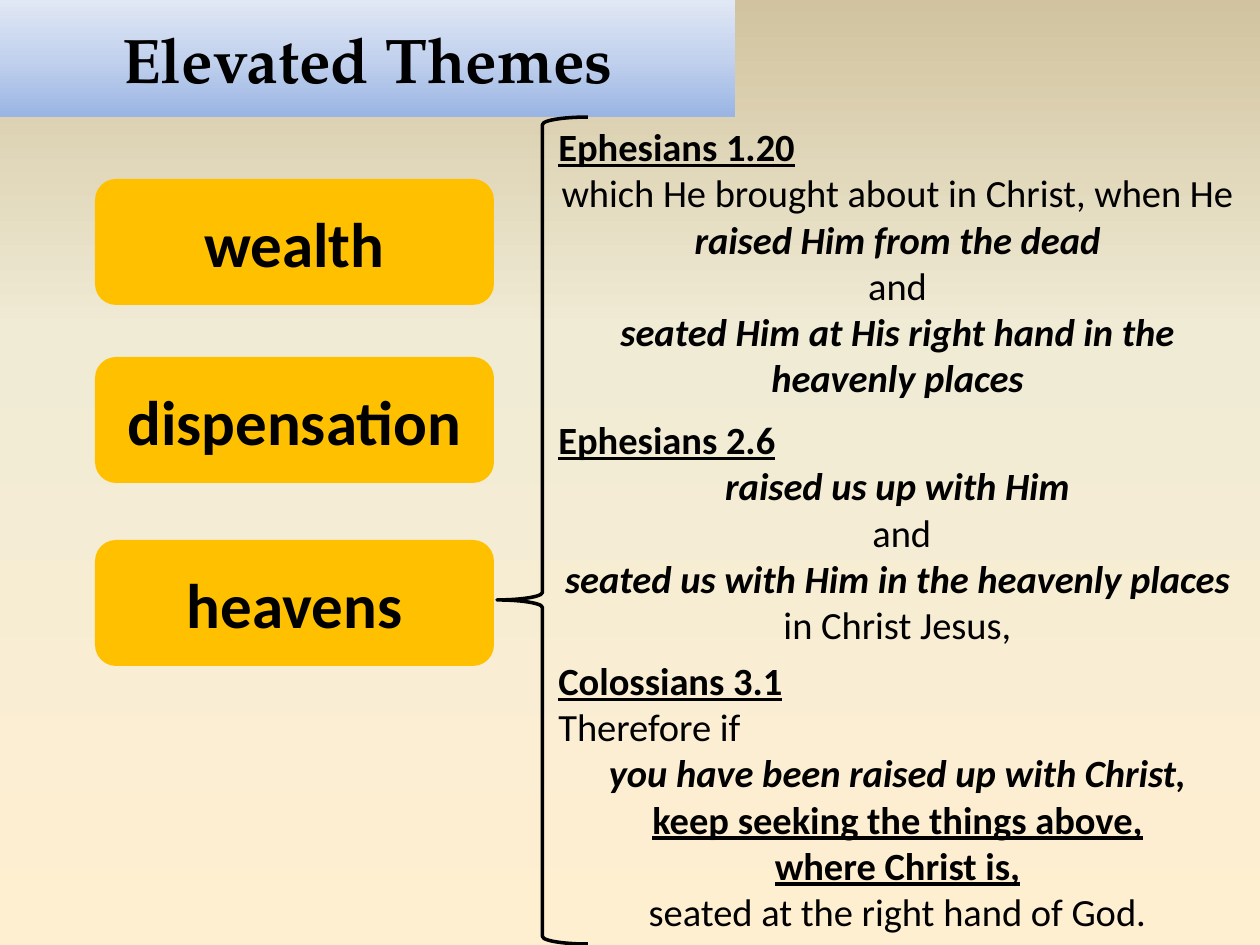
import copy
import pptx
import pptx.util
import pptx.dml.color
import pptx.enum.shapes
import pptx.enum.text

PX = 914400 / 126  # EMU per px
COLORS = {"text": "000000", "box": "FFC000"}
BACKGROUND_STOPS = [(0, "FFEFD1"), (0.65, "F0EBD5"), (1, "D1C39F")]
TITLE_STOPS = [(0, "9AB5E4"), (0.5, "C2D1ED"), (1, "E1E8F5")]
SHAPES = pptx.enum.shapes.MSO_SHAPE
ALIGN = pptx.enum.text.PP_ALIGN
ANCHOR = pptx.enum.text.MSO_ANCHOR
rgb = pptx.dml.color.RGBColor.from_string


def fill_gradient(fill, stops):
    fill.gradient()
    fill.gradient_angle = 90
    stop_list = fill._fill._gradFill.gsLst
    stop_list.append(copy.deepcopy(stop_list[0]))
    for stop, (position, color) in zip(fill.gradient_stops, stops):
        stop.position = position
        stop.color.rgb = rgb(color)


def add_run(paragraph, text, size, font_name="Calibri", **formats):
    run = paragraph.add_run()
    run.text = text
    run.font.color.rgb = rgb(COLORS["text"])
    values = {"name": font_name, "size": pptx.util.Pt(size), **formats}
    for name, value in values.items():
        setattr(run.font, name, value)


presentation = pptx.Presentation()
presentation.slide_width = pptx.util.Inches(10)
presentation.slide_height = pptx.util.Inches(7.5)
slide = presentation.slides.add_slide(presentation.slide_layouts[5])
fill_gradient(slide.background.fill, BACKGROUND_STOPS)

# Title band
title = slide.shapes.title
title.left, title.top, title.width, title.height = (round(v * PX) for v in (0, 0, 735, 117))
fill_gradient(title.fill, TITLE_STOPS)
title.text_frame.vertical_anchor = ANCHOR.MIDDLE
paragraph = title.text_frame.paragraphs[0]
paragraph.alignment = ALIGN.CENTER
add_run(paragraph, "Elevated Themes", 36, "TeX Gyre Pagella", bold=True)

# Theme boxes
for theme, top in [("wealth", 179), ("dispensation", 357), ("heavens", 540)]:
    box = slide.shapes.add_shape(
        SHAPES.ROUNDED_RECTANGLE, *(round(v * PX) for v in (95, top, 399, 126)))
    box.shadow.inherit = False
    box.fill.solid()
    box.fill.fore_color.rgb = rgb(COLORS["box"])
    box.line.fill.background()
    box.text_frame.vertical_anchor = ANCHOR.MIDDLE
    paragraph = box.text_frame.paragraphs[0]
    paragraph.alignment = ALIGN.CENTER
    add_run(paragraph, theme, 36, bold=True)

# Scripture passages: each paragraph is an alignment and its runs
PLAIN = {}
HEADING = {"bold": True, "underline": True}
STRONG = {"bold": True, "italic": True}
LEFT, CENTER = ALIGN.LEFT, ALIGN.CENTER
passages = [
    (117, 292, [
        (LEFT, [("Ephesians 1.20", HEADING)]),
        (CENTER, [("which He brought about in Christ, when He ", PLAIN),
                  ("raised Him from the dead", STRONG)]),
        (CENTER, [("and", PLAIN)]),
        (CENTER, [("seated Him at His right hand in the heavenly places", STRONG)]),
    ]),
    (410, 246, [
        (LEFT, [("Ephesians 2.6", HEADING)]),
        (CENTER, [("raised us up with Him", STRONG)]),
        (CENTER, [(" and", PLAIN)]),
        (CENTER, [("seated us with Him in the heavenly places", STRONG)]),
        (CENTER, [("in Christ Jesus,", PLAIN)]),
    ]),
    (651, 292, [
        (LEFT, [("Colossians 3.1", HEADING)]),
        (LEFT, [("Therefore if", PLAIN)]),
        (CENTER, [("you have been raised up with Christ,", STRONG)]),
        (CENTER, [("keep seeking the things above,", HEADING)]),
        (CENTER, [("where Christ is,", HEADING)]),
        (CENTER, [("seated at the right hand of God.", PLAIN)]),
    ]),
]
for top, height, lines in passages:
    passage = slide.shapes.add_textbox(*(round(v * PX) for v in (546, top, 703, height)))
    frame = passage.text_frame
    frame.word_wrap = True
    frame.auto_size = pptx.enum.text.MSO_AUTO_SIZE.SHAPE_TO_FIT_TEXT
    for index, (alignment, runs) in enumerate(lines):
        paragraph = frame.add_paragraph() if index else frame.paragraphs[0]
        paragraph.alignment = alignment
        for text, formats in runs:
            add_run(paragraph, text, 22, **formats)

# Brace from the last theme to the passages
brace = slide.shapes.add_shape(
    SHAPES.LEFT_BRACE, *(round(v * PX) for v in (497, 117, 91, 827)))
brace.adjustments[0] = 0.083
brace.adjustments[1] = 0.584
brace.shadow.inherit = False
brace.fill.background()
brace.line.color.rgb = rgb(COLORS["text"])
brace.line.width = pptx.util.Pt(2)

presentation.save("out.pptx")
